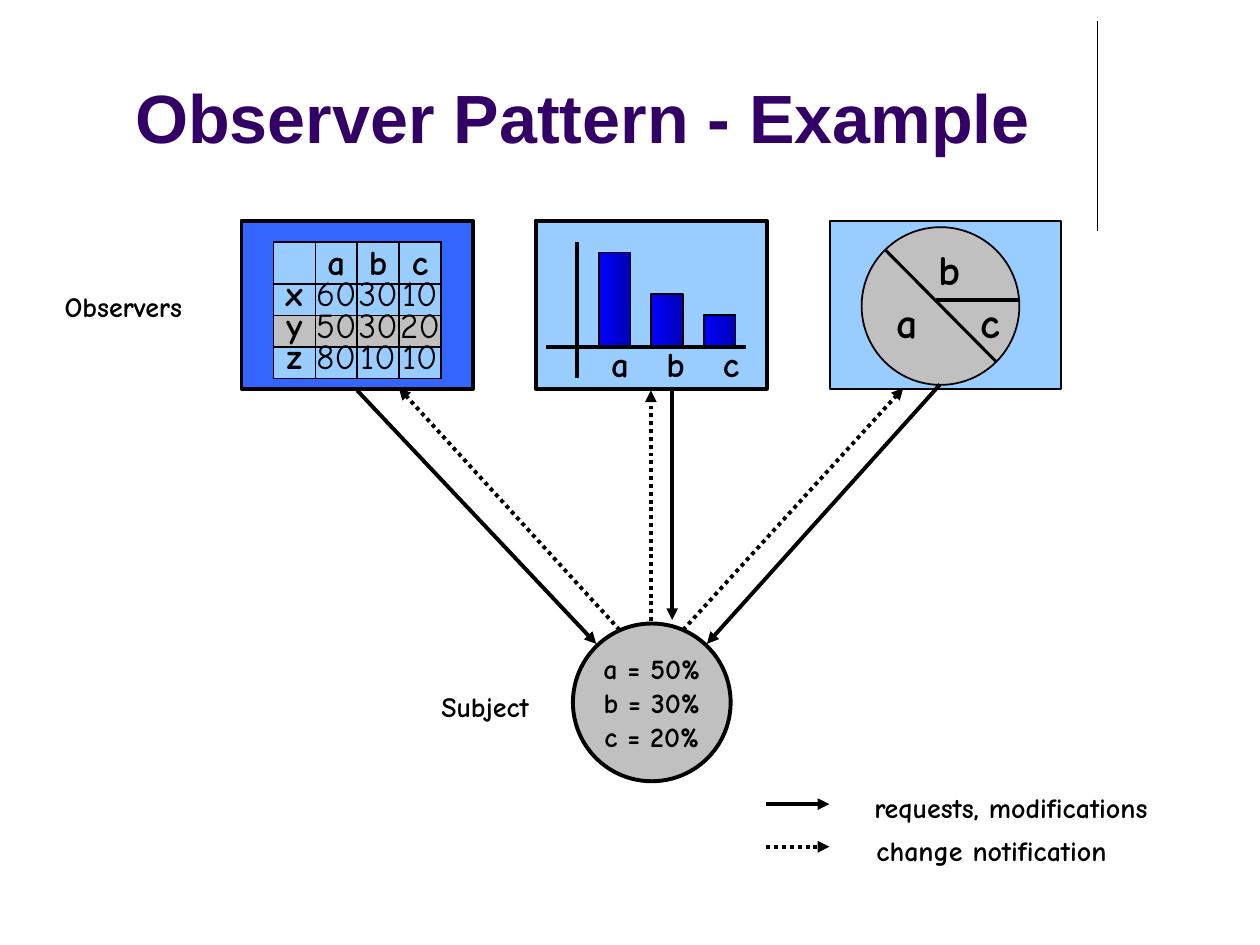
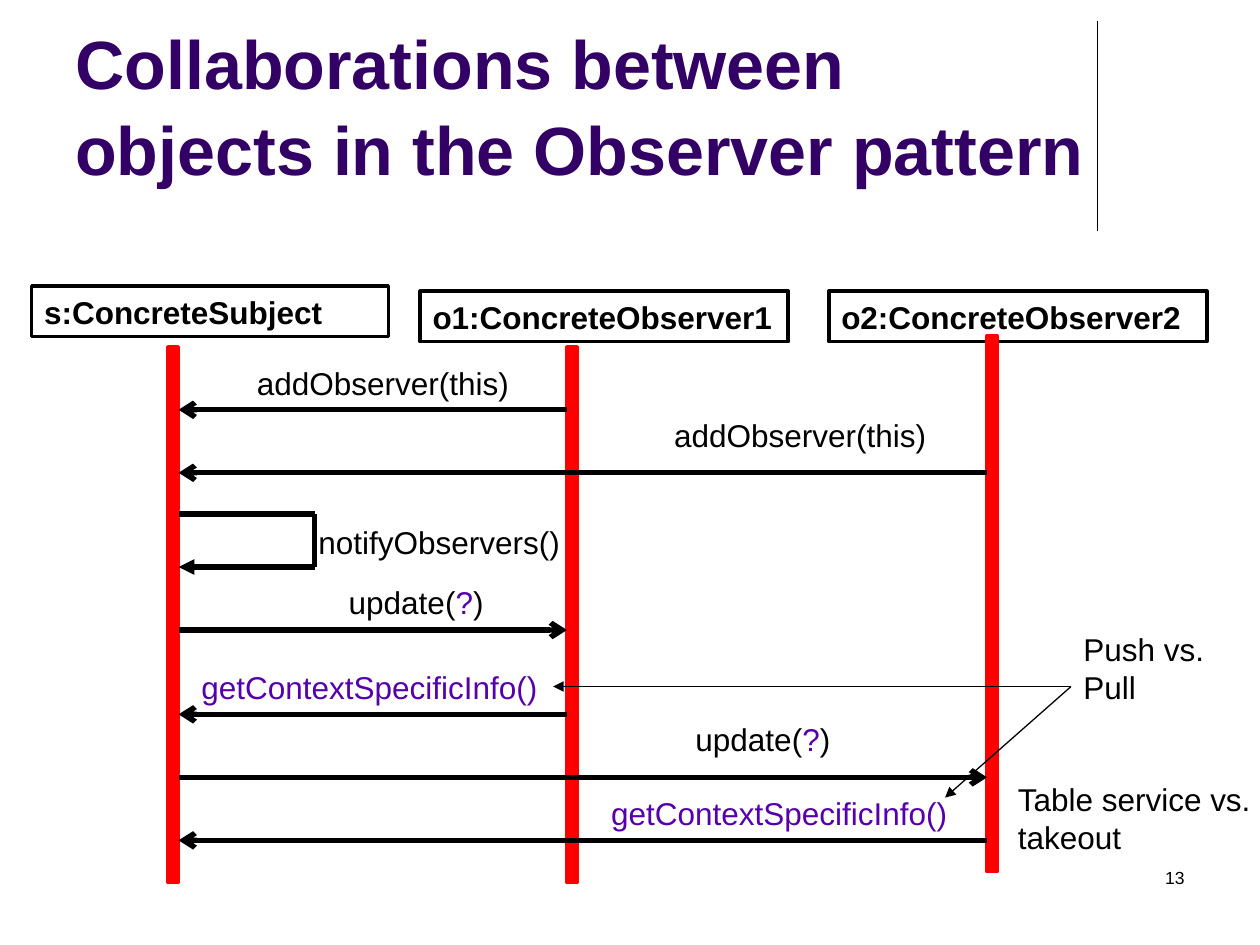
from itertools import pairwise

from lxml import etree
from pptx import Presentation
from pptx.dml.color import RGBColor
from pptx.enum.dml import MSO_LINE_DASH_STYLE as DASH
from pptx.enum.shapes import MSO_CONNECTOR, MSO_SHAPE as SHAPE
from pptx.enum.text import MSO_ANCHOR as ANCHOR, PP_ALIGN as ALIGN
from pptx.oxml.ns import qn
from pptx.util import Cm, Pt

BLACK, PURPLE, VIOLET = "000000", "330066", "5600AC"
SKY, BLUE, GREY, RED = "99CCFF", "3366FF", "C0C0C0", "FF0000"
BAR_STOPS = ("0000FF", "0000B6")
SANS, COMIC = "Arial", "Comic Neue"
WINDOW_W, WINDOW_H = 4.66, 3.39
SUBJECT_D = 3.18


def rgb(code):
    return RGBColor.from_string(code)


def style(p, size, font=SANS, bold=False, color=BLACK, align=ALIGN.LEFT):
    p.alignment = align
    p.font.size, p.font.name, p.font.bold = Pt(size), font, bold
    p.font.color.rgb = rgb(color)


def write(sp, lines, size, anchor=ANCHOR.TOP, wrap=False, **look):
    """Fill a shape with paragraphs; a line is a string or a list of (text, colour)."""
    tf = sp.text_frame
    tf.word_wrap, tf.vertical_anchor = wrap, anchor
    for i, line in enumerate(lines):
        p = tf.add_paragraph() if i else tf.paragraphs[0]
        if isinstance(line, str):
            p.text = line
        else:
            for text, color in line:
                r = p.add_run()
                r.text = text
                r.font.color.rgb = rgb(color)
        style(p, size, **look)
    return sp


def add_text(s, x, y, w, h, lines, size, **look):
    return write(s.shapes.add_textbox(Cm(x), Cm(y), Cm(w), Cm(h)), lines, size, **look)


def add_box(s, x, y, w, h, fill=None, line=BLACK, width=1, kind=SHAPE.RECTANGLE):
    sp = s.shapes.add_shape(kind, Cm(x), Cm(y), Cm(w), Cm(h))
    sp.shadow.inherit = False
    if fill:
        sp.fill.solid()
        sp.fill.fore_color.rgb = rgb(fill)
    else:
        sp.fill.background()
    sp.line.color.rgb, sp.line.width = rgb(line), Pt(width)
    return sp


def add_line(s, start, end, width=2.25, head=None, dotted=False):
    c = s.shapes.add_connector(MSO_CONNECTOR.STRAIGHT, *map(Cm, start + end))
    c.line.color.rgb, c.line.width = rgb(BLACK), Pt(width)
    if dotted:
        c.line.dash_style = DASH.ROUND_DOT
    sp_pr = c._element.spPr
    if head:
        etree.SubElement(sp_pr.find(qn("a:ln")), qn("a:tailEnd"), type=head)
    etree.SubElement(sp_pr, qn("a:effectLst"))
    return c


def add_slide(prs, title, top, height, align):
    """Start a slide with the shared rule and title."""
    s = prs.slides.add_slide(prs.slide_layouts[6])
    add_line(s, (22.12, 0.43), (22.12, 4.65), 0.75)
    sp = add_text(s, 1.27, top, 20.96, height, [title], 39, anchor=ANCHOR.BOTTOM,
                  wrap=True, bold=True, color=PURPLE, align=align)
    sp.text_frame.paragraphs[0].line_spacing = 1.05
    return s


def comic_label(s, cx, cy, text, size, w=1.0, h=1.0):
    """Bold label centred on a point."""
    add_text(s, cx - w / 2, cy - h / 2, w, h, [text], size, anchor=ANCHOR.MIDDLE,
             font=COMIC, bold=True, align=ALIGN.CENTER)


def border_cell(cell):
    tc_pr = cell._tc.get_or_add_tcPr()
    for side in ("lnL", "lnR", "lnT", "lnB"):
        ln = etree.SubElement(tc_pr, qn(f"a:{side}"), w=str(Pt(1)))
        fill = etree.SubElement(ln, qn("a:solidFill"))
        etree.SubElement(fill, qn("a:srgbClr"), val=BLACK)


def sheet_window(s, x, y):
    add_box(s, x, y, WINDOW_W, WINDOW_H, BLUE, width=2.25)
    rows = [["", "a", "b", "c"],
            ["x", "60", "30", "10"],
            ["y", "50", "30", "20"],
            ["z", "80", "10", "10"]]
    table = s.shapes.add_table(4, 4, Cm(x + 0.64), Cm(y + 0.43), Cm(3.38), Cm(2.54)).table
    table.first_row = table.horz_banding = False
    for i, row in enumerate(rows):
        for j, value in enumerate(row):
            cell = table.cell(i, j)
            border_cell(cell)
            cell.fill.solid()
            cell.fill.fore_color.rgb = rgb(GREY if row[0] == "y" else SKY)
            cell.margin_left = cell.margin_right = cell.margin_top = cell.margin_bottom = 0
            cell.vertical_anchor = ANCHOR.BOTTOM
            p = cell.text_frame.paragraphs[0]
            p.text = value
            p.line_spacing = Pt(17)
            style(p, 20, COMIC, bold=i == 0 or j == 0, align=ALIGN.CENTER)


def bar_window(s, x, y):
    add_box(s, x, y, WINDOW_W, WINDOW_H, SKY, width=2.25)
    base = y + 2.54
    add_line(s, (x + 0.84, y + 0.43), (x + 0.84, y + 3.18))
    for i, (name, height) in enumerate([("a", 1.9), ("b", 1.06), ("c", 0.64)]):
        bar = add_box(s, x + 1.27 + 1.06 * i, base - height, 0.64, height)
        bar.fill.gradient()
        bar.fill.gradient_angle = 0
        for stop, color, position in zip(bar.fill.gradient_stops, BAR_STOPS, (0, 1)):
            stop.color.rgb, stop.position = rgb(color), position
        comic_label(s, x + 1.7 + 1.12 * i, y + 2.88, name, 20)
    add_line(s, (x + 4.24, base), (x + 0.2, base))


def pie_window(s, x, y):
    add_box(s, x, y, WINDOW_W, WINDOW_H, SKY)
    add_box(s, x + 0.64, y + 0.13, 3.18, 3.18, GREY, kind=SHAPE.OVAL)
    for name, dx, dy in [("a", 1.56, 2.03), ("b", 2.41, 0.97), ("c", 3.24, 2.03)]:
        comic_label(s, x + dx, y + dy, name, 24)
    add_line(s, (x + 1.11, y + 0.58), (x + 3.35, y + 2.84), 1.75)
    add_line(s, (x + 2.13, y + 1.6), (x + 3.81, y + 1.6))


def subject_circle(s, x, y):
    sp = add_box(s, x, y, SUBJECT_D, SUBJECT_D, GREY, width=2.25, kind=SHAPE.OVAL)
    write(sp, ["a = 50%", "b = 30%", "c = 20%"], 16, anchor=ANCHOR.MIDDLE,
          font=COMIC, bold=True, align=ALIGN.CENTER)


def legend(s, x, y):
    entries = [("requests, modifications", 4.93, False), ("change notification", 4.54, True)]
    for i, (text, dx, dotted) in enumerate(entries):
        row = y + 0.86 * i
        add_line(s, (x, row), (x + 1.27, row), head="triangle", dotted=dotted)
        comic_label(s, x + dx, row + 0.07, text, 16, w=6.8)


def example_slide(prs):
    s = add_slide(prs, "Observer Pattern - Example", 0.84, 2.46, ALIGN.CENTER)
    for i, window in enumerate((sheet_window, bar_window, pie_window)):
        window(s, 4.87 + 5.93 * i, 4.45)
    subject_circle(s, 11.55, 12.57)
    requests = [((7.2, 7.87), (12.02, 12.98)),
                ((18.95, 7.75), (14.25, 12.98)),
                ((13.55, 7.82), (13.55, 12.5))]
    notifications = [((13.12, 12.52), (13.12, 7.87)),
                     ((12.49, 12.7), (8.04, 7.82)),
                     ((13.77, 12.7), (18.21, 7.82))]
    for dotted, arrows in enumerate((requests, notifications)):
        for start, end in arrows:
            add_line(s, start, end, head="triangle", dotted=bool(dotted))
    legend(s, 15.45, 16.21)
    comic_label(s, 2.49, 6.18, "Observers", 16, w=3.3)
    comic_label(s, 9.78, 14.24, "Subject", 16, w=2.64)


def participant(s, x, y, w, name, bar_x, bar_y):
    """Named object box with its lifeline."""
    write(add_box(s, x, y, w, 1.02, width=2), [name], 18,
          anchor=ANCHOR.MIDDLE, wrap=True, bold=True)
    add_box(s, bar_x, bar_y, 0.2, 10.8, RED, RED, 2)


def message(s, start, end, y, line, x, top, w):
    """Arrow between two lifelines with its call written above."""
    add_text(s, x, top, w, 1.02, [line], 18)
    add_line(s, (start, y), (end, y), 3, head="arrow")


def self_call(s, x, y, text):
    corners = [(x, y), (x + 2.74, y), (x + 2.74, y + 1.07), (x, y + 1.07)]
    for i, (start, end) in enumerate(pairwise(corners)):
        add_line(s, start, end, 3, head="triangle" if i == 2 else None)
    add_text(s, x + 2.57, y + 0.05, 5.44, 1.02, [text], 18)


def push_pull_note(s, x, y):
    add_text(s, x, y, 3.38, 2.57, ["Push vs. Pull"], 18, wrap=True)
    start = (x, y + 1.27)
    for end in ((x - 10.44, y + 1.27), (x - 2.54, y + 3.51)):
        add_line(s, start, end, 0.75, head="triangle")
    add_text(s, x - 1.32, y + 3.03, 5.26, 1.8, ["Table service vs.", "takeout"], 18)


def collaboration_slide(prs):
    s = add_slide(prs, "Collaborations between objects in the Observer pattern",
                  0.33, 3.61, ALIGN.LEFT)
    add_text(s, 18.21, 17.35, 5.92, 1.27, ["13"], 10, align=ALIGN.RIGHT)

    participant(s, 0.64, 5.77, 7.19, "s:ConcreteSubject", 3.39, 6.99)
    participant(s, 8.47, 5.87, 7.42, "o1:ConcreteObserver1", 11.43, 6.99)
    participant(s, 16.71, 5.87, 7.62, "o2:ConcreteObserver2", 19.9, 6.77)

    subject, first, second = 3.6, 11.43, 19.9
    add = [("addObserver(this)", BLACK)]
    update = [("update(", BLACK), ("?", VIOLET), (")", BLACK)]
    get_info = [("getContextSpecificInfo()", VIOLET)]
    message(s, first, subject, 8.26, add, 4.93, 7.21, 5.64)
    message(s, second, subject, 9.53, add, 13.34, 8.26, 5.64)
    self_call(s, subject, 10.36, "notifyObservers()")
    message(s, subject, first, 12.7, update, 6.78, 11.63, 3.25)
    message(s, first, subject, 14.4, get_info, 3.81, 13.34, 7.34)
    message(s, subject, second, 15.67, update, 13.77, 14.4, 3.25)
    message(s, second, subject, 16.94, get_info, 12.07, 15.88, 7.34)
    push_pull_note(s, 21.59, 12.57)


def main():
    prs = Presentation()
    prs.slide_width, prs.slide_height = Cm(25.4), Cm(19.05)
    example_slide(prs)
    collaboration_slide(prs)
    prs.save("out.pptx")


if __name__ == "__main__":
    main()
